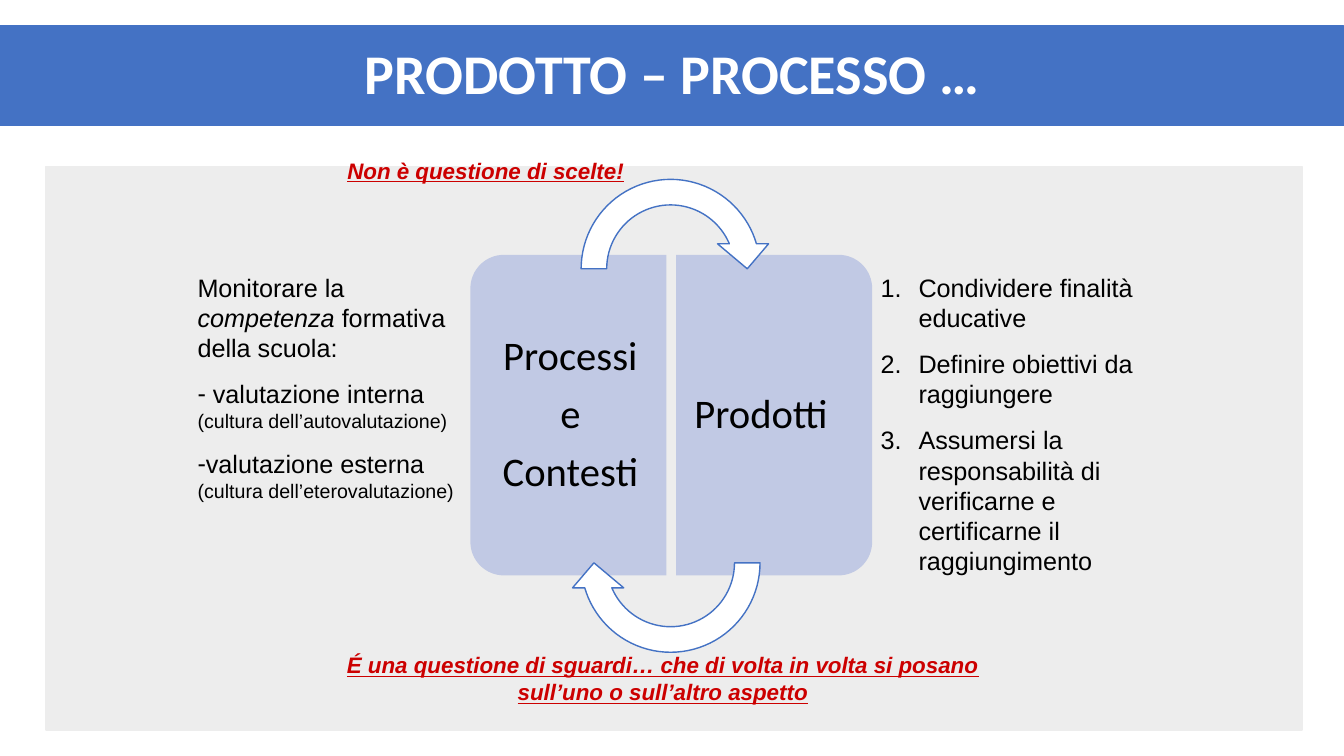
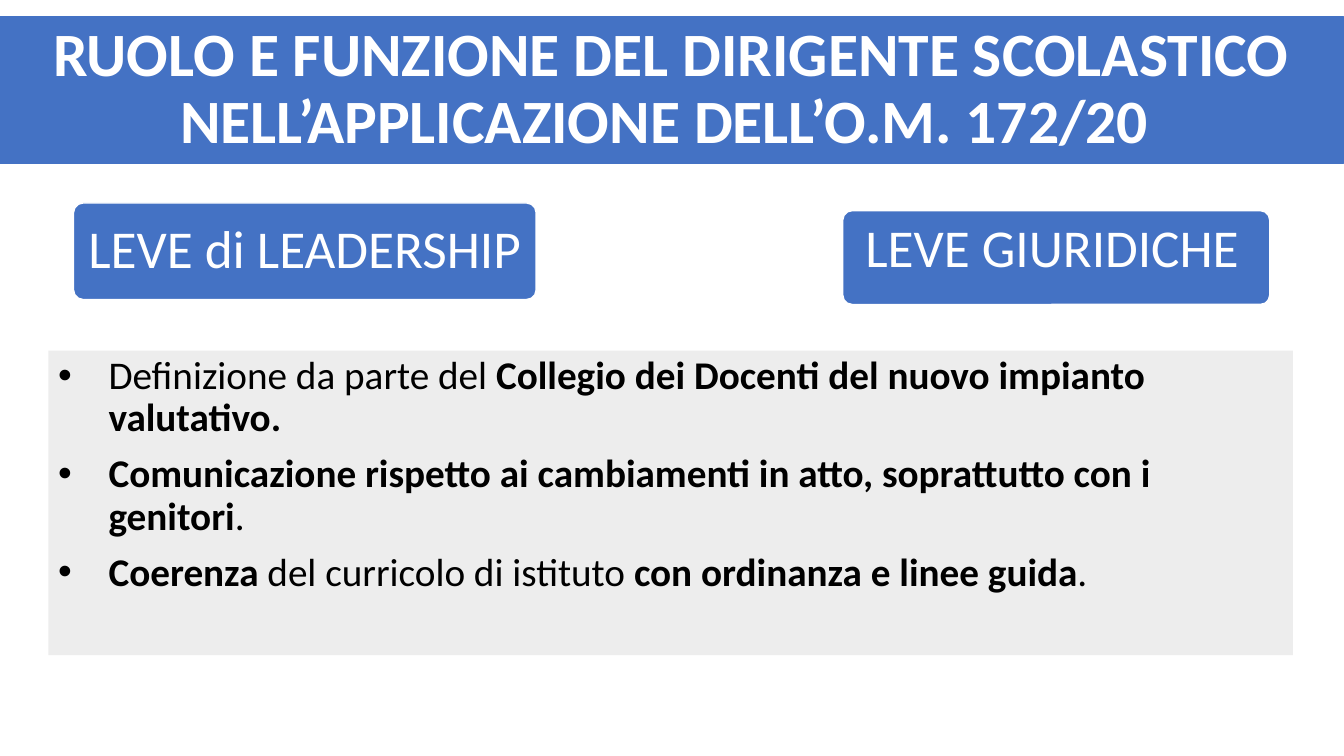
"""Build two slides on school evaluation and the head teacher's role."""
from dataclasses import dataclass
from math import cos, pi, sin

from lxml.etree import SubElement
from pptx import Presentation
from pptx.dml.color import RGBColor
from pptx.enum.shapes import MSO_SHAPE
from pptx.enum.text import MSO_ANCHOR, PP_ALIGN
from pptx.oxml.ns import qn
from pptx.util import Pt


@dataclass(frozen=True)
class Theme:
    """Colours, fonts and type sizes shared by the slides."""
    blue: RGBColor = RGBColor(0x44, 0x72, 0xC4)
    pale_blue: RGBColor = RGBColor(0xC1, 0xC9, 0xE4)
    grey: RGBColor = RGBColor(0xED, 0xED, 0xED)
    red: RGBColor = RGBColor(0xCC, 0x00, 0x00)
    white: RGBColor = RGBColor(0xFF, 0xFF, 0xFF)
    black: RGBColor = RGBColor(0x00, 0x00, 0x00)
    heading_font: str = "Calibri"
    note_font: str = "Arial"
    title: int = 40
    long_title: int = 44
    pill: int = 38
    half: int = 29
    body: int = 28
    side: int = 18
    note: int = 16
    detail: int = 14


THEME = Theme()
SLIDE_WIDTH, SLIDE_HEIGHT = 960, 540
TEXT_INSETS = (7.2, 3.6, 7.2, 3.6)
CORNER_RADIUS = 24
CORNER_STEPS = 16
ARROW_ADJUSTMENTS = (0.125, 11.42, 204.58, 108, 0.125)


def apply_format(target, values):
    """Set each attribute named in a dict of format values."""
    for name, value in values.items():
        setattr(target, name, value)


def paint(shape, fill, line=None, width=1):
    """Give a shape its fill and line, without a shadow."""
    shape.shadow.inherit = False
    shape.fill.solid()
    shape.fill.fore_color.rgb = fill
    if line is None:
        shape.line.fill.background()
    else:
        shape.line.color.rgb = line
        shape.line.width = Pt(width)


def add_panel(slide, box, fill, line=None, width=1, kind=MSO_SHAPE.RECTANGLE):
    """Add a painted preset shape and return it."""
    shape = slide.shapes.add_shape(kind, *map(Pt, box))
    paint(shape, fill, line, width)
    return shape


def font_format(size, name=THEME.heading_font, **extra):
    """Return the format values of a font."""
    return {"size": Pt(size), "name": name, **extra}


def paragraph_format(alignment=PP_ALIGN.LEFT, before=0, after=0, spacing=1.0):
    """Return the format values of a paragraph."""
    return {"alignment": alignment, "space_before": Pt(before),
            "space_after": Pt(after), "line_spacing": spacing}


def add_bullet(paragraph, mark, indent):
    """Give a paragraph a bullet character, or a number if mark is None."""
    properties = paragraph._p.get_or_add_pPr()
    properties.set("marL", str(Pt(indent)))
    properties.set("indent", str(-Pt(indent)))
    if mark is None:
        SubElement(properties, qn("a:buAutoNum"), type="arabicPeriod")
    else:
        SubElement(properties, qn("a:buFont"), typeface="Arial")
        SubElement(properties, qn("a:buChar"), char=mark)


def write_text(shape, paragraphs, font, layout, color=THEME.black,
               insets=TEXT_INSETS, anchor=MSO_ANCHOR.MIDDLE):
    """Write paragraphs, each a list of (text, font changes) runs."""
    frame = shape.text_frame
    sides = ("margin_left", "margin_top", "margin_right", "margin_bottom")
    apply_format(frame, {"word_wrap": True, "vertical_anchor": anchor,
                         **dict(zip(sides, map(Pt, insets)))})
    for index, runs in enumerate(paragraphs):
        paragraph = frame.add_paragraph() if index else frame.paragraphs[0]
        apply_format(paragraph, layout)
        for text, changes in runs:
            run = paragraph.add_run()
            run.text = text
            apply_format(run.font, {**font, **changes})
            run.font.color.rgb = color
    return frame.paragraphs


def add_text(slide, box, paragraphs, font, layout, **options):
    """Add a text box and return its paragraphs."""
    shape = slide.shapes.add_textbox(*map(Pt, box))
    return write_text(shape, paragraphs, font, layout, **options)


def add_title_band(slide, top, height, text, size):
    """Add the full-width blue band with the slide title."""
    band = add_panel(slide, (0, top, SLIDE_WIDTH, height),
                     THEME.blue, THEME.blue, 0.75)
    write_text(band, [[(text, {})]], font_format(size, bold=True),
               paragraph_format(PP_ALIGN.CENTER, spacing=0.9), THEME.white)


def add_half(slide, box, rounded_side, lines, alignment, insets):
    """Add half of a rounded block; side is -1 for left, 1 for right."""
    left, top, width, height = box
    straight = left if rounded_side > 0 else left + width
    center_x = straight + rounded_side * (width - CORNER_RADIUS)
    angles = [pi / 2 * step / CORNER_STEPS for step in range(CORNER_STEPS + 1)]
    upper = [(center_x + rounded_side * CORNER_RADIUS * sin(angle),
              top + CORNER_RADIUS * (1 - cos(angle))) for angle in angles]
    lower = [(x, 2 * top + height - y) for x, y in reversed(upper)]
    outline = upper + lower + [(straight, top + height)]
    builder = slide.shapes.build_freeform(Pt(straight), Pt(top))
    builder.add_line_segments([(Pt(x), Pt(y)) for x, y in outline])
    shape = builder.convert_to_shape()
    paint(shape, THEME.pale_blue)
    write_text(shape, [[(line, {})] for line in lines], font_format(THEME.half),
               paragraph_format(alignment, after=10, spacing=0.9), insets=insets)


def add_turn_arrow(slide, top, rotation):
    """Add a circular arrow linking the two halves."""
    arrow = add_panel(slide, (406, top, 146, 146), THEME.white, THEME.blue,
                      kind=MSO_SHAPE.CIRCULAR_ARROW)
    arrow.rotation = rotation
    for index, value in enumerate(ARROW_ADJUSTMENTS):
        arrow.adjustments[index] = value


def add_red_note(slide, box, text, alignment):
    """Add an underlined red remark."""
    font = font_format(THEME.note, THEME.note_font,
                       bold=True, italic=True, underline=True)
    add_text(slide, box, [[(text, {})]], font, paragraph_format(alignment),
             color=THEME.red, insets=(3.6, 3.6, 3.6, 3.6))


def add_side_text(slide, box, paragraphs):
    """Add the explanation beside one half and return its paragraphs."""
    return add_text(slide, box, paragraphs,
                    font_format(THEME.side, THEME.note_font),
                    paragraph_format(before=11.2), anchor=MSO_ANCHOR.TOP)


def add_pill(slide, box, text, insets):
    """Add a blue rounded label."""
    pill = add_panel(slide, box, THEME.blue, THEME.white,
                     kind=MSO_SHAPE.ROUNDED_RECTANGLE)
    pill.adjustments[0] = 0.1
    write_text(pill, [[(text, {})]], font_format(THEME.pill),
               paragraph_format(PP_ALIGN.CENTER, spacing=0.9),
               THEME.white, insets)


def build_process_slide(slide):
    """Build the slide on products and processes."""
    add_panel(slide, (33, 119, 897, 402.5), THEME.grey, THEME.grey)
    add_half(slide, (336, 182, 140, 229), -1, ("Processi", "e", "Contesti"),
             PP_ALIGN.CENTER, (16, 21.6, 13, 21.6))
    add_half(slide, (483, 182, 140, 229), 1, ("Prodotti",),
             PP_ALIGN.LEFT, (13, 21.6, 16, 21.6))
    add_turn_arrow(slide, 119, 0)
    add_turn_arrow(slide, 329, 180)

    detail = {"size": Pt(THEME.detail)}
    monitoring = add_side_text(slide, (134, 191, 212, 205), [
        [("Monitorare la ", {}), ("competenza", {"italic": True}),
         (" formativa della scuola:", {})],
        [(" valutazione interna ", {}),
         ("(cultura dell’autovalutazione)", detail)],
        [("valutazione esterna ", {}),
         ("(cultura dell’eterovalutazione)", detail)],
    ])
    for paragraph in monitoring[1:]:
        add_bullet(paragraph, "-", 0)

    goals = ("Condividere finalità educative",
             "Definire obiettivi da raggiungere",
             "Assumersi la responsabilità di verificarne e certificarne "
             "il raggiungimento")
    for paragraph in add_side_text(slide, (622, 191, 204.5, 226),
                                   [[(goal, {})] for goal in goals]):
        add_bullet(paragraph, None, 27)

    add_red_note(slide, (238, 458, 471, 53),
                 "É una questione di sguardi… che di volta in volta si posano "
                 "sull’uno o sull’altro aspetto", PP_ALIGN.CENTER)
    add_red_note(slide, (244.5, 104.5, 471, 34),
                 "Non è questione di scelte!", PP_ALIGN.LEFT)
    add_title_band(slide, 18.5, 71.5, "PRODOTTO – PROCESSO …", THEME.title)


def build_role_slide(slide):
    """Build the slide on the head teacher's role."""
    add_title_band(slide, 12, 104.5,
                   "RUOLO E FUNZIONE DEL DIRIGENTE SCOLASTICO "
                   "NELL’APPLICAZIONE DELL’O.M. 172/20 ", THEME.long_title)
    add_pill(slide, (602, 150.5, 305, 67), "LEVE GIURIDICHE ", (9, 6, 6, 17))
    add_pill(slide, (52.5, 145, 330.5, 69), "LEVE di LEADERSHIP", (6, 6, 6, 6))

    strong = {"bold": True}
    panel = add_panel(slide, (34.5, 250.5, 889, 217.5), THEME.grey)
    actions = write_text(panel, [
        [("Definizione da parte del ", {}),
         ("Collegio dei Docenti del nuovo impianto valutativo.", strong)],
        [("Comunicazione rispetto ai cambiamenti in atto, "
          "soprattutto con i genitori", strong), (".", {})],
        [("Coerenza", strong), (" del curricolo di istituto ", {}),
         ("con ordinanza e linee guida", strong), (".", {})],
    ], font_format(THEME.body), paragraph_format(after=9.8, spacing=0.9),
        anchor=MSO_ANCHOR.TOP)
    for paragraph in actions:
        add_bullet(paragraph, "•", 36)


def main():
    """Create the presentation and save it."""
    presentation = Presentation()
    apply_format(presentation, {"slide_width": Pt(SLIDE_WIDTH),
                                "slide_height": Pt(SLIDE_HEIGHT)})
    blank_layout = presentation.slide_layouts[6]
    for build in (build_process_slide, build_role_slide):
        build(presentation.slides.add_slide(blank_layout))
    presentation.save("out.pptx")


if __name__ == "__main__":
    main()
